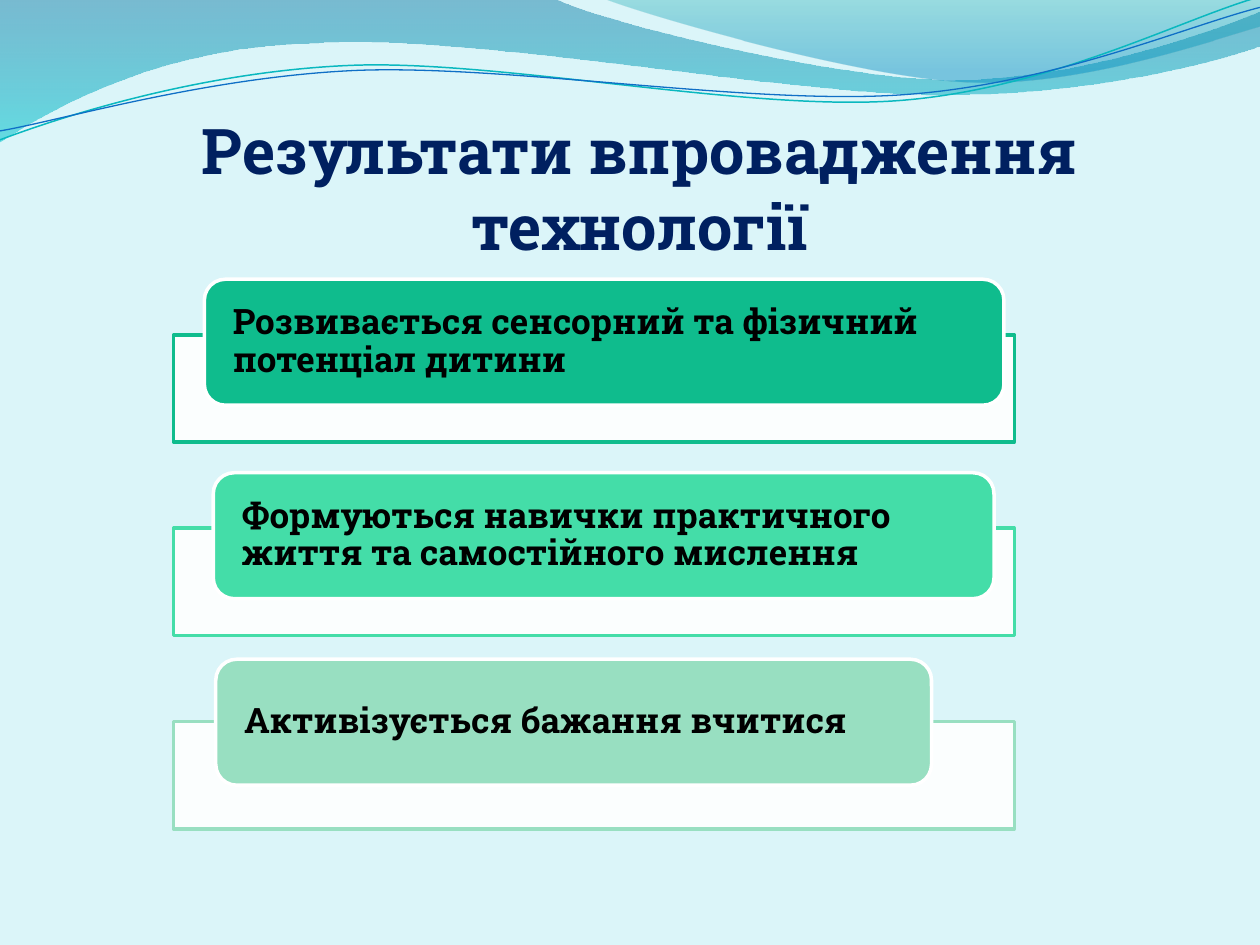
from pptx import Presentation
from pptx.dml.color import RGBColor
from pptx.enum.shapes import MSO_SHAPE as Shape
from pptx.enum.text import MSO_ANCHOR as Anchor, MSO_AUTO_SIZE as AutoSize, PP_ALIGN as Align
from pptx.oxml.ns import qn
from pptx.util import Cm, Pt
from lxml.etree import SubElement

FONT = "Roboto Slab"
COLORS = {
    "background": "DBF5F9", "title": "002060", "text": "000000", "white": "FFFFFF",
    "deep blue": "0074A1", "cyan": "00C6CF", "teal": "00A1A9", "blue": "008BBF",
    "teal line": "0AB8BF", "blue line": "0F6FC6",
    "green": "0FBC8D", "mint": "44DDA8", "sage": "98DFC1",
}

TITLE = "Результати впровадження технології"
# text, colour, left, top and width of the card in cm
RESULTS = [
    ("Розвивається сенсорний та фізичний потенціал дитини", "green", 4.12, 5.63, 16.12),
    ("Формуються навички практичного життя та самостійного мислення", "mint", 4.3, 9.53, 15.74),
    ("Активізується бажання вчитися", "sage", 4.35, 13.29, 14.43),
]
CARD_HEIGHT = 2.54
FRAME_LEFT, FRAME_TOP, FRAME_WIDTH, FRAME_HEIGHT, FRAME_STEP = 3.5, 6.75, 16.95, 2.16, 3.9

# Outlines in cm: a start point, then lines (one point) and Bezier curves (three points)
WAVES = [
    ((0, 0),
     [[(11.18, -0.03)],
      [(12.09, 0.43), (16.87, 1.6), (19.25, 1.6)],
      [(21.67, 1.6), (24.33, 0.66), (25.4, 0.23)],
      [(25.43, 0.91)],
      [(24.97, 1.12), (22.1, 1.93), (18.95, 1.91)],
      [(15.8, 1.91), (9.7, 0.71), (6.53, 0.86)],
      [(3.28, 0.91), (1.17, 2.11), (-0.03, 2.87)],
      [(0, 0)]],
     [(0, "deep blue", 45), (1, "cyan", 55)]),
    ((12.17, -0.03),
     [[(12.93, 0.28), (17.32, 1.57), (19.53, 1.65)],
      [(21.74, 1.75), (24.41, 0.81), (25.4, 0.53)],
      [(25.4, 0)],
      [(12.17, -0.03)]],
     [(0, "teal", 30), (0.8, "blue", 45)]),
]
STRANDS = [
    ((0, 2.82),
     [[(1.22, 2.36), (4.01, 1.45), (7.04, 1.32)],
      [(10.03, 1.19), (15.06, 2.26), (18.11, 2.03)],
      [(21.16, 1.8), (23.83, 0.38), (25.35, -0.05)]],
     "teal line", 0.85),
    ((0, 2.64),
     [[(1.19, 2.44), (4.17, 1.55), (7.19, 1.42)],
      [(10.24, 1.3), (15.16, 2.13), (18.21, 1.91)],
      [(21.23, 1.7), (23.9, 0.53), (25.4, 0.15)]],
     "blue line", 0.75),
]


def color(name):
    return RGBColor.from_string(COLORS[name])


def add_outline(shapes, start, segments, close):
    """Add a freeform, then join each run of three points into one Bezier curve."""
    points = [(Cm(x), Cm(y)) for x, y in [start, *sum(segments, [])]]
    builder = shapes.build_freeform(*points[0])
    builder.add_line_segments(points[1:], close=close)
    outline = builder.convert_to_shape()
    outline.shadow.inherit = False

    steps = iter(list(outline.element.iter(qn("a:lnTo"))))
    for segment in segments:
        first, *others = [next(steps) for _ in segment]
        if others:
            curve = first.makeelement(qn("a:cubicBezTo"))
            first.addprevious(curve)
            for step in (first, *others):
                curve.append(step[0])
                step.getparent().remove(step)
    return outline


def set_opacity(shape, percents):
    """Give the fill colours of a shape, in order, their opacity."""
    for fill_color, percent in zip(shape.element.spPr.iter(qn("a:srgbClr")), percents):
        SubElement(fill_color, qn("a:alpha")).set("val", str(percent * 1000))


def add_box(shapes, kind, left, top, width, height, fill, line):
    box = shapes.add_shape(kind, Cm(left), Cm(top), Cm(width), Cm(height))
    box.shadow.inherit = False
    box.fill.solid()
    box.fill.fore_color.rgb = color(fill)
    box.line.color.rgb = color(line)
    box.line.width = Pt(2)
    return box


def write(frame, text, size, font_color, align):
    frame.word_wrap = True
    frame.text = text
    paragraph = frame.paragraphs[0]
    paragraph.alignment = align
    font = paragraph.font
    font.name, font.size, font.bold = FONT, Pt(size), True
    font.color.rgb = color(font_color)
    return paragraph


def add_waves(shapes):
    for start, segments, stops in WAVES:
        wave = add_outline(shapes, start, segments, close=True)
        wave.fill.gradient()
        wave.fill.gradient_angle = 270
        for stop, (position, name, _) in zip(wave.fill.gradient_stops, stops):
            stop.position = position
            stop.color.rgb = color(name)
        set_opacity(wave, [opacity for _, _, opacity in stops])
        wave.line.fill.background()
    for start, segments, name, width in STRANDS:
        strand = add_outline(shapes, start, segments, close=False)
        strand.fill.background()
        strand.line.color.rgb = color(name)
        strand.line.width = Pt(width)


def add_title(title):
    title.left, title.top, title.width, title.height = Cm(3.5), Cm(2.13), Cm(18.8), Cm(3.33)
    frame = title.text_frame
    frame.auto_size = AutoSize.NONE
    frame.vertical_anchor = Anchor.TOP
    write(frame, TITLE, 36, "title", Align.CENTER)
    title.element.getparent().append(title.element)  # in front of the waves


def add_results(shapes):
    for row, (text, accent, left, top, width) in enumerate(RESULTS):
        frame_box = add_box(shapes, Shape.RECTANGLE, FRAME_LEFT, FRAME_TOP + row * FRAME_STEP,
                            FRAME_WIDTH, FRAME_HEIGHT, "white", accent)
        set_opacity(frame_box, [90])
        card = add_box(shapes, Shape.ROUNDED_RECTANGLE, left, top, width, CARD_HEIGHT,
                       accent, "white")
        frame = card.text_frame
        frame.margin_left = frame.margin_right = Cm(0.45)
        frame.margin_top = frame.margin_bottom = 0
        frame.vertical_anchor = Anchor.MIDDLE
        write(frame, text, 20, "text", Align.LEFT).line_spacing = 0.9


def main():
    deck = Presentation()
    deck.slide_width, deck.slide_height = Cm(25.4), Cm(19.05)
    slide = deck.slides.add_slide(deck.slide_layouts[5])
    slide.background.fill.solid()
    slide.background.fill.fore_color.rgb = color("background")
    add_waves(slide.shapes)
    add_title(slide.shapes.title)
    add_results(slide.shapes)
    deck.save("out.pptx")


if __name__ == "__main__":
    main()
